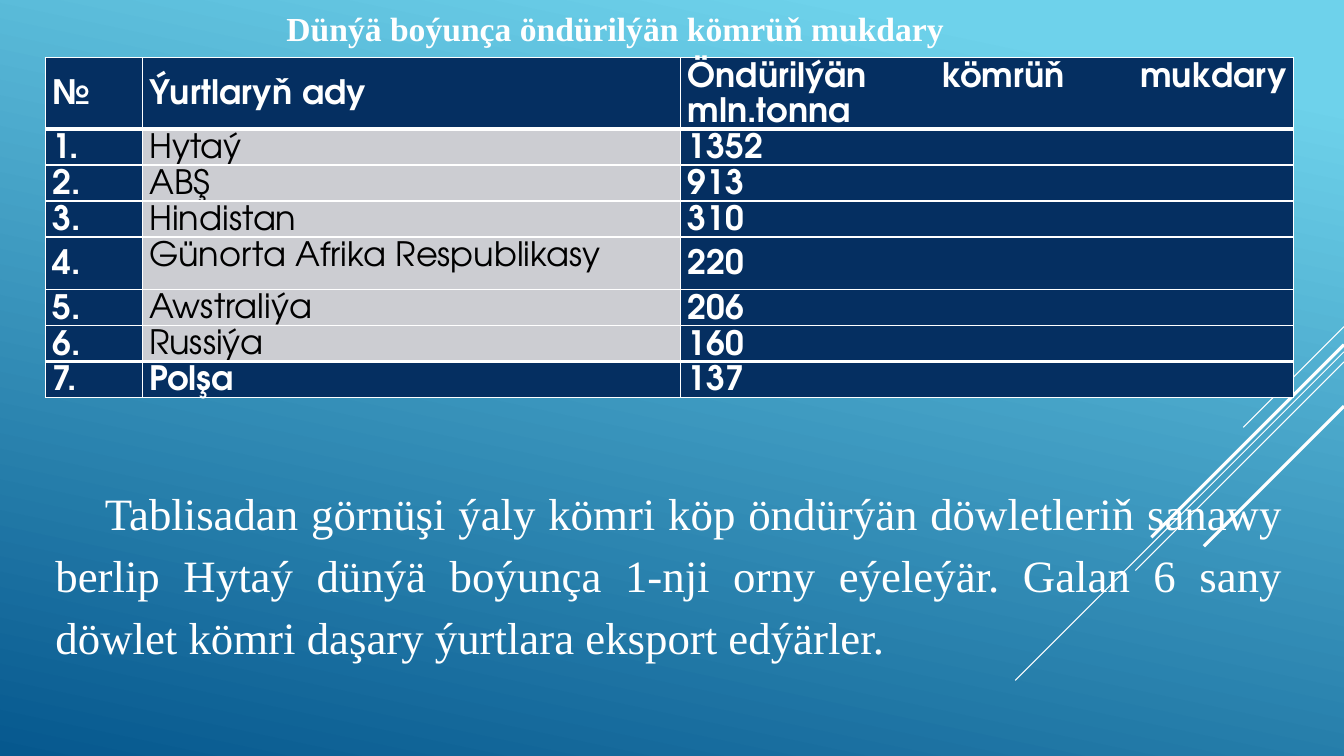
from dataclasses import dataclass

from lxml import etree
from pptx import Presentation
from pptx.dml.color import RGBColor
from pptx.enum.shapes import MSO_CONNECTOR
from pptx.enum.text import MSO_ANCHOR, MSO_AUTO_SIZE, PP_ALIGN
from pptx.oxml.ns import qn
from pptx.util import Inches, Pt

STRAIGHT = MSO_CONNECTOR.STRAIGHT
TOP, MIDDLE = MSO_ANCHOR.TOP, MSO_ANCHOR.MIDDLE
LEFT, JUSTIFY = PP_ALIGN.LEFT, PP_ALIGN.JUSTIFY
NO_AUTOFIT = MSO_AUTO_SIZE.NONE


@dataclass(frozen=True)
class Theme:
    """Colours, fonts and type sizes of the slide."""
    sky: str = "6ED2EB"
    deep: str = "06588E"
    navy: str = "052F61"
    grey: str = "CCCDD2"
    white: str = "FFFFFF"
    black: str = "000000"
    serif: str = "Times New Roman"
    sans: str = "TeX Gyre Adventor"
    title_size: int = 24
    table_size: int = 24
    body_size: int = 32


THEME = Theme()
SLIDE_WIDTH, SLIDE_HEIGHT = 13.33, 7.5
HEADINGS = ("№", "Ýurtlaryň ady", "Öndürilýän kömrüň mukdary mln.tonna")
OUTPUT = (("Hytaý", 1352), ("ABŞ", 913), ("Hindistan", 310),
          ("Günorta Afrika Respublikasy", 220), ("Awstraliýa", 206),
          ("Russiýa", 160), ("Polşa", 137))
COLUMN_WIDTHS = (0.96, 5.34, 6.08)
ROW_HEIGHT, TALL_ROW_HEIGHT = 0.28, 0.52
TALL_ROWS = (0, 4)
STREAKS = ((3.24, 1.0, 0.75), (3.49, 3.26, 0.75), (3.59, 2.07, 0.75),
           (3.42, 1.91, 2.25), (4.03, 1.39, 2.25))
CONCLUSION = ("Tablisadan görnüşi ýaly kömri köp öndürýän döwletleriň sanawy "
              "berlip Hytaý dünýä boýunça 1-nji orny eýeleýär. Galan 6 sany "
              "döwlet kömri daşary ýurtlara eksport edýärler.")


def paint_background(slide):
    """Fill the slide with the sky gradient."""
    fill = slide.background.fill
    fill.gradient()
    fill.gradient_angle = 258
    for stop, position, color in zip(fill.gradient_stops, (0.1, 1),
                                     (THEME.sky, THEME.deep)):
        stop.position = position
        stop.color.rgb = RGBColor.from_string(color)


def add_streak(slide, top, reach, weight):
    """Draw a 45 degree streak running down from the right edge."""
    streak = slide.shapes.add_connector(
        STRAIGHT, Inches(SLIDE_WIDTH), Inches(top),
        Inches(SLIDE_WIDTH - reach), Inches(top + reach))
    streak.line.color.rgb = RGBColor.from_string(THEME.white)
    streak.line.width = Pt(weight)
    etree.SubElement(streak.line._get_or_add_ln().getparent(),
                     qn("a:effectLst"))


def write(paragraph, text, font, size, color=THEME.white, bold=False,
          align=JUSTIFY, spacing=1.15):
    """Add one formatted run to a paragraph."""
    paragraph.alignment = align
    paragraph.line_spacing = spacing
    run = paragraph.add_run()
    run.text = text
    run.font.name = font
    run.font.size = Pt(size)
    run.font.bold = bold
    run.font.color.rgb = RGBColor.from_string(color)


def place(placeholder, left, top, width, height):
    """Move a placeholder and return its first paragraph."""
    placeholder.left, placeholder.top = Inches(left), Inches(top)
    placeholder.width, placeholder.height = Inches(width), Inches(height)
    frame = placeholder.text_frame
    frame.word_wrap = True
    frame.auto_size = NO_AUTOFIT
    frame.vertical_anchor = TOP
    paragraph = frame.paragraphs[0]
    paragraph.space_before = Pt(0)
    return paragraph


def add_title(slide):
    """Write the table's heading in the title placeholder."""
    paragraph = place(slide.shapes.title, 2.74, 0.03, 6.79, 0.54)
    write(paragraph, "Dünýä boýunça öndürilýän kömrüň mukdary", THEME.serif,
          THEME.title_size, bold=True, align=LEFT, spacing=1.0)


def add_conclusion(slide):
    """Write the closing paragraph in the body placeholder."""
    paragraph = place(slide.placeholders[1], 0.45, 4.69, 12.38, 1.92)
    properties = paragraph._p.get_or_add_pPr()
    properties.set("marL", "0")
    properties.set("indent", str(Inches(0.49)))
    etree.SubElement(properties, qn("a:buNone"))
    write(paragraph, CONCLUSION, THEME.serif, THEME.body_size)


def set_borders(cell, top, bottom):
    """Rule a cell in white, with the given top and bottom weights."""
    properties = cell._tc.get_or_add_tcPr()
    edges = (("a:lnL", 1), ("a:lnR", 1), ("a:lnT", top), ("a:lnB", bottom))
    for index, (edge, weight) in enumerate(edges):
        line = etree.Element(qn(edge), w=str(Pt(weight)))
        solid = etree.SubElement(line, qn("a:solidFill"))
        etree.SubElement(solid, qn("a:srgbClr"), val=THEME.white)
        properties.insert(index, line)


def fill_cell(cell, text, plain, anchor):
    """Format a cell as a plain country name or a bold heading."""
    cell.margin_left = cell.margin_right = Inches(0.07)
    cell.margin_top = cell.margin_bottom = 0
    cell.vertical_anchor = anchor
    cell.fill.solid()
    cell.fill.fore_color.rgb = RGBColor.from_string(
        THEME.grey if plain else THEME.navy)
    write(cell.text_frame.paragraphs[0], text, THEME.sans, THEME.table_size,
          THEME.black if plain else THEME.white, not plain)


def add_output_table(slide):
    """Tabulate coal output by country."""
    rows = [HEADINGS] + [(f"{rank}.", country, str(tonnes)) for
                         rank, (country, tonnes) in enumerate(OUTPUT, 1)]
    heights = [TALL_ROW_HEIGHT if index in TALL_ROWS else ROW_HEIGHT
               for index in range(len(rows))]
    table = slide.shapes.add_table(
        len(rows), len(HEADINGS), Inches(0.45), Inches(0.57),
        Inches(sum(COLUMN_WIDTHS)), Inches(sum(heights))).table
    table.horz_banding = False
    for column, width in zip(table.columns, COLUMN_WIDTHS):
        column.width = Inches(width)
    last = len(rows) - 1
    for r, (values, height) in enumerate(zip(rows, heights)):
        table.rows[r].height = Inches(height)
        for c, value in enumerate(values):
            cell = table.cell(r, c)
            country = c == 1 and r > 0
            fill_cell(cell, value, country and r < last,
                      TOP if country else MIDDLE)
            set_borders(cell, 3 if r in (1, last) else 1,
                        3 if r in (0, last - 1) else 1)


def main():
    """Build and save the slide."""
    deck = Presentation()
    deck.slide_width, deck.slide_height = Inches(SLIDE_WIDTH), Inches(SLIDE_HEIGHT)
    slide = deck.slides.add_slide(deck.slide_layouts[1])
    paint_background(slide)
    for streak in STREAKS:
        add_streak(slide, *streak)
    add_output_table(slide)
    add_title(slide)
    add_conclusion(slide)
    deck.save("out.pptx")


if __name__ == "__main__":
    main()
